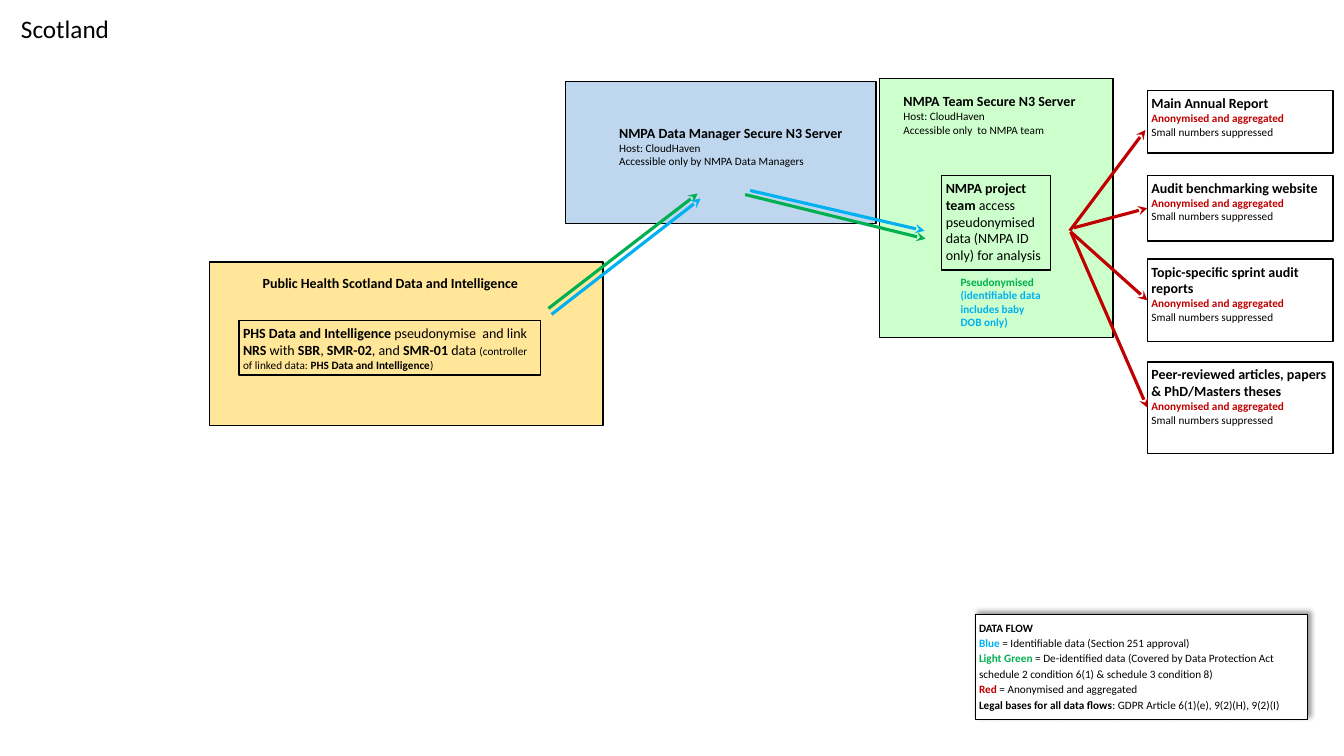
from dataclasses import dataclass

from lxml.etree import SubElement
from pptx import Presentation
from pptx.dml.color import RGBColor
from pptx.enum.shapes import MSO_CONNECTOR, MSO_SHAPE
from pptx.enum.text import MSO_ANCHOR, MSO_AUTO_SIZE, PP_ALIGN
from pptx.oxml.ns import qn
from pptx.util import Inches, Pt


@dataclass(frozen=True)
class Theme:
    font: str = "Calibri"
    black: str = "000000"
    white: str = "FFFFFF"
    blue: str = "00B0F0"
    green: str = "00B050"
    red: str = "C00000"
    manager_fill: str = "BED7EF"
    team_fill: str = "CCFFCC"
    health_fill: str = "FFE699"
    title: int = 18
    body: int = 10
    small: int = 8
    outline: float = 1
    thin: float = 0.5
    arrow: float = 2.25
    inset: float = 0.04


THEME = Theme()


# Text pieces: (text, size, bold, colour)
def bold(text, size=THEME.body, colour=THEME.black):
    return text, size, True, colour


def plain(text, size=THEME.body, colour=THEME.black):
    return text, size, False, colour


def small(text):
    return plain(text, THEME.small)


def small_bold(text, colour=THEME.black):
    return bold(text, THEME.small, colour)


def set_values(target, values):
    for name, value in values.items():
        setattr(target, name, value)


def write(shape, paragraphs, inset=THEME.inset, align=PP_ALIGN.LEFT, spacing=None):
    frame = shape.text_frame
    set_values(frame, {"word_wrap": True, "vertical_anchor": MSO_ANCHOR.TOP})
    if inset is not None:
        sides = ("left", "top", "right", "bottom")
        set_values(frame, {f"margin_{side}": Inches(inset) for side in sides})
    for index, pieces in enumerate(paragraphs):
        paragraph = frame.add_paragraph() if index else frame.paragraphs[0]
        set_values(paragraph, {"alignment": align, "line_spacing": spacing})
        for text, size, is_bold, colour in pieces:
            run = paragraph.add_run()
            run.text = text
            set_values(run.font, {"name": THEME.font, "size": Pt(size), "bold": is_bold})
            run.font.color.rgb = RGBColor.from_string(colour)


def add_text(slide, box, paragraphs, grow=False, **options):
    shape = slide.shapes.add_textbox(*map(Inches, box))
    write(shape, paragraphs, **options)
    if grow:
        shape.text_frame.auto_size = MSO_AUTO_SIZE.SHAPE_TO_FIT_TEXT


def add_box(slide, box, fill=None, paragraphs=(), width=THEME.outline, **options):
    shape = slide.shapes.add_shape(MSO_SHAPE.RECTANGLE, *map(Inches, box))
    shape.shadow.inherit = False
    if fill:
        shape.fill.solid()
        shape.fill.fore_color.rgb = RGBColor.from_string(fill)
    else:
        shape.fill.background()
    shape.line.color.rgb = RGBColor.from_string(THEME.black)
    shape.line.width = Pt(width)
    write(shape, paragraphs, **options)
    return shape


def add_arrow(slide, start, end, colour):
    arrow = slide.shapes.add_connector(MSO_CONNECTOR.STRAIGHT, *map(Inches, start + end))
    arrow.line.color.rgb = RGBColor.from_string(colour)
    arrow.line.width = Pt(THEME.arrow)
    SubElement(arrow.line._get_or_add_ln(), qn("a:tailEnd"), type="stealth")
    SubElement(arrow._element.spPr, qn("a:effectLst"))
    return arrow


def inside(box, left, top, width, height):
    return box[0] + left, box[1] + top, width, height


def server_text(name, access):
    return [[bold(name)], [small("Host: CloudHaven")], [small(access)]]


# Regions
def add_manager_server(slide, box):
    add_box(slide, box, THEME.manager_fill)
    add_text(slide, inside(box, 0.49, 0.38, 2.39, 0.55), server_text(
        "NMPA Data Manager Secure N3 Server", "Accessible only by NMPA Data Managers"))


def add_team_server(slide, box):
    add_box(slide, box, THEME.team_fill)
    add_text(slide, inside(box, 0.2, 0.1, 2.17, 1), server_text(
        "NMPA Team Secure N3 Server", "Accessible only  to NMPA team"))
    add_box(slide, inside(box, 0.62, 0.96, 1.08, 0.94), paragraphs=[[
        bold("NMPA project team "),
        plain("access pseudonymised data (NMPA ID only) for analysis")]])
    add_text(slide, inside(box, 0.71, 1.9, 1.06, 0.77), [
        [small_bold("Pseudonymised", THEME.green)],
        [small_bold("(identifiable data includes baby DOB only)", THEME.blue)],
    ], grow=True, inset=None)


def add_health_source(slide, box):
    add_box(slide, box, THEME.health_fill)
    add_text(slide, inside(box, 0.29, 0.08, 3, 0.27),
             [[bold("Public Health Scotland Data and Intelligence")]], align=PP_ALIGN.CENTER)
    add_box(slide, inside(box, 0.29, 0.58, 2.99, 0.54), paragraphs=[[
        bold("PHS Data and Intelligence "), plain("pseudonymise  and link "),
        bold("NRS "), plain("with "), bold("SBR"), plain(", "), bold("SMR-02"),
        plain(", and "), bold("SMR-01"), plain(" data "),
        small("(controller of linked data: "),
        small_bold("PHS Data and Intelligence"), small(")")]])


def add_outputs(slide, left, width):
    # Title, top, height, arrow start, arrow end (None joins the box side)
    outputs = [
        ("Main Annual Report", 0.9, 0.62, (10.61, 2.29), (11.36, 1.29)),
        ("Audit benchmarking website", 1.74, 0.65, (10.65, 2.26), None),
        ("Topic-specific sprint audit reports", 2.57, 0.82, (10.62, 2.3), None),
        ("Peer-reviewed articles, papers & PhD/Masters theses", 3.59, 0.91, (10.62, 2.3), None),
    ]
    for title, top, height, start, end in outputs:
        output = add_box(slide, (left, top, width, height), paragraphs=[
            [bold(title)],
            [small_bold("Anonymised and aggregated", THEME.red)],
            [small("Small numbers suppressed")]])
        arrow = add_arrow(slide, start, end or (left, top + height / 2), THEME.red)
        if end is None:
            arrow.end_connect(output, 1)


def add_data_flows(slide):
    for start, end, colour in [
        ((7.39, 1.93), (9.18, 2.37), THEME.green),
        ((5.44, 3.06), (6.92, 1.92), THEME.green),
        ((5.47, 3.12), (6.95, 1.97), THEME.blue),
        ((7.44, 1.89), (9.17, 2.29), THEME.blue),
    ]:
        add_arrow(slide, start, end, colour)


def add_legend(slide, box):
    legend = add_box(slide, box, THEME.white, [
        [small_bold("DATA FLOW")],
        [small_bold("Blue", THEME.blue), small(" = Identifiable data (Section 251 approval)")],
        [small_bold("Light Green ", THEME.green),
         small("= De-identified data (Covered by Data Protection Act "
               "schedule 2 condition 6(1) & schedule 3 condition 8)")],
        [small_bold("Red ", THEME.red), small("= Anonymised and aggregated")],
        [small_bold("Legal bases for all data flows"),
         small(": GDPR Article 6(1)(e), 9(2)(H), 9(2)(I)")],
    ], width=THEME.thin, spacing=1.15)
    # Soft shadow towards the upper right
    effects = legend._element.spPr.find(qn("a:effectLst"))
    shadow = SubElement(effects, qn("a:outerShdw"), blurRad=str(Pt(4)), dist=str(Pt(3)),
                        dir=str(315 * 60000), algn="bl", rotWithShape="0")
    colour = SubElement(shadow, qn("a:srgbClr"), val=THEME.black)
    SubElement(colour, qn("a:alpha"), val="40000")


def main():
    presentation = Presentation()
    set_values(presentation, {"slide_width": Inches(13.33), "slide_height": Inches(7.5)})
    slide = presentation.slides.add_slide(presentation.slide_layouts[6])
    add_text(slide, (0.11, 0.08, 3.26, 0.4), [[plain("Scotland", THEME.title)]],
             grow=True, inset=None)
    add_manager_server(slide, (5.61, 0.81, 3.08, 1.41))
    add_team_server(slide, (8.72, 0.78, 2.32, 2.57))
    add_health_source(slide, (2.08, 2.6, 3.9, 1.62))
    add_outputs(slide, 11.38, 1.84)
    add_data_flows(slide)
    add_legend(slide, (9.67, 6.1, 3.3, 1.04))
    presentation.save("out.pptx")


if __name__ == "__main__":
    main()
